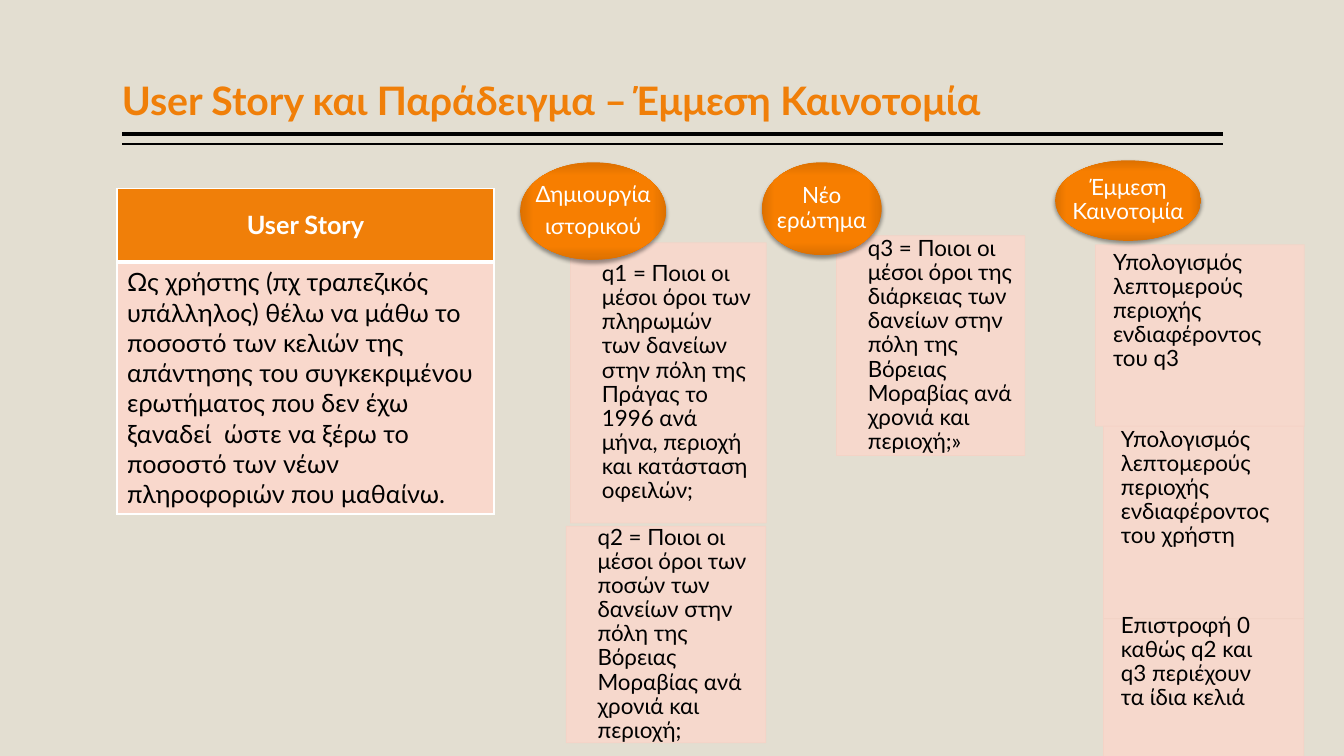
"""Build the user story slide with its table and three columns of example steps."""
from pptx import Presentation
from pptx.dml.color import RGBColor
from pptx.enum.shapes import MSO_CONNECTOR, MSO_SHAPE
from pptx.enum.text import MSO_ANCHOR, MSO_AUTO_SIZE, PP_ALIGN
from pptx.oxml import parse_xml
from pptx.oxml.ns import nsdecls, qn
from pptx.util import Cm, Pt
from lxml import etree

RECTANGLE, OVAL = MSO_SHAPE.RECTANGLE, MSO_SHAPE.OVAL
STRAIGHT = MSO_CONNECTOR.STRAIGHT
MIDDLE, BOTTOM, TOP = MSO_ANCHOR.MIDDLE, MSO_ANCHOR.BOTTOM, MSO_ANCHOR.TOP
LEFT, CENTER = PP_ALIGN.LEFT, PP_ALIGN.CENTER
NO_AUTOFIT = MSO_AUTO_SIZE.NONE

BEIGE = RGBColor(0xE3, 0xDE, 0xD1)
ORANGE = RGBColor(0xF0, 0x7F, 0x09)
PINK = RGBColor(0xF9, 0xD8, 0xCC)
PINK_EDGE = RGBColor(0xF5, 0xD3, 0xC6)
BLACK = RGBColor(0, 0, 0)
WHITE = RGBColor(0xFF, 0xFF, 0xFF)
OVAL_STOPS = [
    (0, RGBColor(0xF9, 0x7F, 0x00)),
    (71, RGBColor(0xF7, 0x7E, 0x00)),
    (100, RGBColor(0xDC, 0x70, 0x00)),
]
FONT = "Lato"

TITLE = "User Story και Παράδειγμα – Έμμεση Καινοτομία"
TITLE_BOX = (3.07, 0.2, 27.74, 3.05)
RULES = [(3.38, 3), (3.63, 1)]

STORY_HEADING = "User Story"
STORY = (
    "Ως χρήστης (πχ τραπεζικός υπάλληλος) θέλω να μάθω το ποσοστό των κελιών "
    "της απάντησης του συγκεκριμένου ερωτήματος που δεν έχω ξαναδεί  ώστε να "
    "ξέρω το ποσοστό των νέων πληροφοριών που μαθαίνω."
)
STORY_BOX = (2.95, 4.75, 9.5, 8.2)
HEADING_HEIGHT = 1.85

COLUMNS = [
    {
        "heading": "Δημιουργία\nιστορικού",
        "oval": (13.11, 4.09, 3.68, 2.46),
        "margins": (0.79, 0.28),
        "steps": [
            ("q1 = Ποιοι οι μέσοι όροι των πληρωμών των δανείων στην πόλη της "
             "Πράγας το 1996 ανά μήνα, περιοχή και κατάσταση οφειλών;",
             (14.38, 6.12, 4.93, 7.06), 0),
            ("q2 = Ποιοι οι μέσοι όροι των ποσών των δανείων στην πόλη της "
             "Βόρειας Μοραβίας ανά χρονιά και περιοχή;",
             (14.27, 13.26, 5.03, 5.46), 0),
        ],
    },
    {
        "heading": "Νέο\vερώτημα",
        "oval": (19.2, 4.09, 3.02, 2.34),
        "margins": (0.79, 0.28),
        "steps": [
            ("q3 = Ποιοι οι μέσοι όροι της διάρκειας των δανείων στην πόλη της "
             "Βόρειας Μοραβίας ανά χρονιά και περιοχή;»",
             (21.08, 5.94, 4.75, 5.54), 0),
        ],
    },
    {
        "heading": "Έμμεση\vΚαινοτομία",
        "oval": (26.59, 4.04, 3.68, 2.03),
        "margins": (0.44, 0.66),
        "steps": [
            ("Υπολογισμός λεπτομερούς περιοχής ενδιαφέροντος του q3",
             (27.61, 6.17, 5.26, 4.57), 0.61),
            ("Υπολογισμός λεπτομερούς περιοχής ενδιαφέροντος του χρήστη",
             (27.81, 10.74, 5.05, 4.85), 0.86),
            ("Επιστροφή 0 καθώς q2 και q3 περιέχουν τα ίδια κελιά",
             (27.81, 15.59, 5.05, 3.89), 0.84),
        ],
    },
]


def lengths(values):
    return [Cm(value) for value in values]


def write(frame, text, size, color, align=LEFT, bold=False, line=1.0, after=0):
    frame.text = text
    for paragraph in frame.paragraphs:
        paragraph.alignment = align
        paragraph.line_spacing = line
        paragraph.space_before = Pt(0)
        paragraph.space_after = Pt(after)
        for run in paragraph.runs:
            run.font.name = FONT
            run.font.size = Pt(size)
            run.font.bold = bold
            run.font.color.rgb = color


def set_margins(frame, left=0, top=0, right=0, bottom=0):
    frame.margin_left, frame.margin_top = Cm(left), Cm(top)
    frame.margin_right, frame.margin_bottom = Cm(right), Cm(bottom)


def add_rule(slide, y, width):
    left, _, length, _ = TITLE_BOX
    rule = slide.shapes.add_connector(STRAIGHT, *lengths((left + length, y, left, y)))
    rule.line.color.rgb = BLACK
    rule.line.width = Pt(width)
    etree.SubElement(rule._element.spPr, qn("a:effectLst"))


def add_story(slide):
    table = slide.shapes.add_table(2, 1, *lengths(STORY_BOX)).table
    table.rows[0].height = Cm(HEADING_HEIGHT)
    table.rows[1].height = Cm(STORY_BOX[3] - HEADING_HEIGHT)
    rows = [
        (STORY_HEADING, ORANGE, WHITE, CENTER, MIDDLE, True, (1, 1, 1, 3)),
        (STORY, PINK, BLACK, LEFT, TOP, False, (1, 1, 3, 1)),
    ]
    for index, (text, fill, color, align, anchor, bold, widths) in enumerate(rows):
        cell = table.cell(index, 0)
        cell.fill.solid()
        cell.fill.fore_color.rgb = fill
        cell.vertical_anchor = anchor
        write(cell.text_frame, text, 18, color, align, bold)
        for place, (side, width) in enumerate(zip("LRTB", widths)):
            border = parse_xml(
                f'<a:ln{side} {nsdecls("a")} w="{Pt(width)}"><a:solidFill>'
                f'<a:srgbClr val="{WHITE}"/></a:solidFill></a:ln{side}>')
            cell._tc.tcPr.insert(place, border)


def add_step(slide, text, box, margins, lift):
    step = slide.shapes.add_shape(RECTANGLE, *lengths(box))
    step.shadow.inherit = False
    step.fill.solid()
    step.fill.fore_color.rgb = PINK
    step.line.color.rgb = PINK_EDGE
    step.line.width = Pt(0.5)
    for color in step._element.spPr.iter(qn("a:srgbClr")):
        etree.SubElement(color, qn("a:alpha"), val="90000")
    frame = step.text_frame
    frame.word_wrap = True
    frame.vertical_anchor = MIDDLE
    set_margins(frame, left=margins[0], right=margins[1], bottom=2 * lift)
    write(frame, text, 16, BLACK, line=0.9)


def add_heading(slide, text, box):
    heading = slide.shapes.add_shape(OVAL, *lengths(box))
    heading.line.fill.background()
    heading.shadow.inherit = False
    properties = heading._element.spPr
    stops = "".join(
        f'<a:gs pos="{percent * 1000}"><a:srgbClr val="{color}"/></a:gs>'
        for percent, color in OVAL_STOPS)
    properties.find(qn("a:prstGeom")).addnext(parse_xml(
        f'<a:gradFill {nsdecls("a")} rotWithShape="1"><a:gsLst>{stops}</a:gsLst>'
        '<a:path path="rect"><a:fillToRect l="50000" t="50000" r="50000" b="50000"/>'
        '</a:path></a:gradFill>'))
    properties.find(qn("a:effectLst")).append(parse_xml(
        f'<a:outerShdw {nsdecls("a")} blurRad="{Pt(3.1)}" dist="{Pt(2)}" dir="5400000">'
        f'<a:srgbClr val="{BLACK}"><a:alpha val="38000"/></a:srgbClr></a:outerShdw>'))
    frame = heading.text_frame
    frame.word_wrap = False
    frame.vertical_anchor = MIDDLE
    set_margins(frame)
    write(frame, text, 16, WHITE, CENTER, line=0.9, after=5.6 if "\n" in text else 0)


def main():
    deck = Presentation()
    deck.slide_width, deck.slide_height = Cm(33.87), Cm(19.05)
    slide = deck.slides.add_slide(deck.slide_layouts[5])
    slide.background.fill.solid()
    slide.background.fill.fore_color.rgb = BEIGE

    title = slide.shapes.title
    title.left, title.top, title.width, title.height = lengths(TITLE_BOX)
    title.text_frame.auto_size = NO_AUTOFIT
    title.text_frame.vertical_anchor = BOTTOM
    set_margins(title.text_frame, top=0.13, bottom=0.13)
    write(title.text_frame, TITLE, 28, ORANGE, bold=True, line=0.9)

    for y, width in RULES:
        add_rule(slide, y, width)
    add_story(slide)
    for column in COLUMNS:
        for text, box, lift in column["steps"]:
            add_step(slide, text, box, column["margins"], lift)
        add_heading(slide, column["heading"], column["oval"])
    deck.save("out.pptx")


if __name__ == "__main__":
    main()
